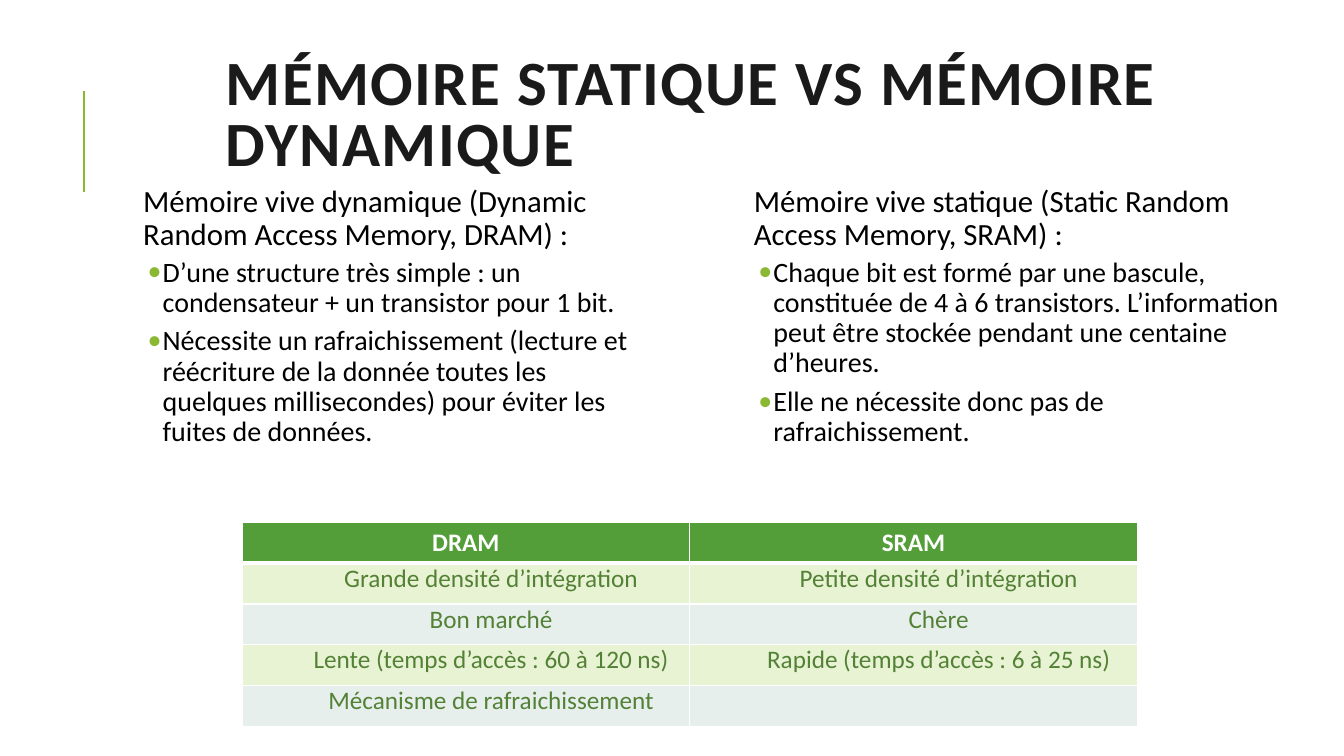
from lxml.etree import SubElement
from pptx import Presentation
from pptx.dml.color import RGBColor
from pptx.enum.shapes import MSO_CONNECTOR
from pptx.enum.text import MSO_ANCHOR, MSO_AUTO_SIZE, PP_ALIGN
from pptx.oxml import parse_xml
from pptx.oxml.ns import nsdecls, qn
from pptx.util import Cm, Pt

TITLE = "MÉMOIRE STATIQUE VS MÉMOIRE DYNAMIQUE"
COLUMNS = [
    {
        "box": (3.23, 4.55, 13.34, 9.07),
        "heading": "Mémoire vive dynamique (Dynamic Random Access Memory, DRAM) :",
        "points": [
            "D’une structure très simple : un condensateur + un transistor pour 1 bit.",
            "Nécessite un rafraichissement (lecture et réécriture de la donnée "
            "toutes les quelques millisecondes) pour éviter les fuites de données.",
        ],
    },
    {
        "box": (18.62, 4.55, 14.15, 8.61),
        "heading": "Mémoire vive statique (Static Random Access Memory, SRAM) :",
        "points": [
            "Chaque bit est formé par une bascule, constituée de 4 à 6 transistors. "
            "L’information peut être stockée pendant une centaine d’heures.",
            "Elle ne nécessite donc pas de rafraichissement.",
        ],
    },
]
COMPARISON = [
    ("DRAM", "SRAM"),
    ("Grande densité d’intégration", "Petite densité d’intégration"),
    ("Bon marché", "Chère"),
    ("Lente (temps d’accès : 60 à 120 ns)", "Rapide (temps d’accès : 6 à 25 ns)"),
    ("Mécanisme de rafraichissement", ""),
]

FONT = "Calibri"
WHITE = RGBColor(0xFF, 0xFF, 0xFF)
BLACK = RGBColor(0x00, 0x00, 0x00)
TITLE_INK = RGBColor(0x1A, 0x1A, 0x1A)
LIME = RGBColor(0x8A, 0xB8, 0x33)
HEADER_GREEN = RGBColor(0x54, 0x9E, 0x39)
CELL_INK = RGBColor(0x53, 0x81, 0x35)
BANDS = [RGBColor(0xE7, 0xEF, 0xEC), RGBColor(0xE8, 0xF3, 0xD4)]

COLUMN_WIDTH, ROW_HEIGHT = Cm(11.28), Cm(1.03)


def style(paragraph, size, color, bold=False):
    for run in paragraph.runs:
        run.font.name = FONT
        run.font.size = Pt(size)
        run.font.bold = bold
        run.font.color.rgb = color


def indent(paragraph, left, first=0):
    properties = paragraph._p.get_or_add_pPr()
    properties.set("marL", str(Cm(left)))
    properties.set("indent", str(Cm(first)))
    return properties


def add_bullet(properties):
    color = SubElement(properties, qn("a:buClr"))
    SubElement(color, qn("a:srgbClr")).set("val", str(LIME))
    SubElement(properties, qn("a:buFont")).set("typeface", FONT)
    SubElement(properties, qn("a:buChar")).set("char", "•")


def add_title(slide):
    title = slide.shapes.title
    title.left, title.top, title.width, title.height = map(Cm, (5.44, 2.24, 29.41, 3))
    frame = title.text_frame
    frame.text = TITLE
    frame.word_wrap = True
    frame.auto_size = MSO_AUTO_SIZE.NONE
    frame.vertical_anchor = MSO_ANCHOR.MIDDLE
    frame.margin_bottom = Cm(1.67)
    heading = frame.paragraphs[0]
    heading.alignment = PP_ALIGN.LEFT
    heading.line_spacing = 0.8
    style(heading, 45, TITLE_INK, True)
    heading.runs[0]._r.get_or_add_rPr().set("spc", "100")


def add_accent(slide):
    accent = slide.shapes.add_connector(
        MSO_CONNECTOR.STRAIGHT, Cm(2.11), Cm(4.83), Cm(2.11), Cm(2.29))
    accent.line.color.rgb = LIME
    accent.line.width = Pt(1.5)
    SubElement(accent._element.spPr, qn("a:effectLst"))


def add_column(slide, column):
    frame = slide.shapes.add_textbox(*map(Cm, column["box"])).text_frame
    frame.word_wrap = True
    frame.margin_left = frame.margin_right = Cm(0.13)
    frame.margin_top = frame.margin_bottom = Cm(0.13)
    frame.text = "\n".join([column["heading"], *column["points"]])
    heading, *points = frame.paragraphs
    heading.line_spacing = 0.9
    heading.space_before, heading.space_after = Pt(12), Pt(2)
    indent(heading, 0.25)
    style(heading, 22, BLACK)
    for point in points:
        point.level = 1
        point.line_spacing = 0.9
        point.space_before, point.space_after = Pt(2), Pt(4)
        add_bullet(indent(point, 0.74, -0.38))
        style(point, 20, BLACK)


def add_borders(cell, bottom):
    widths = {"lnL": 1, "lnR": 1, "lnT": 1, "lnB": bottom}
    for position, (side, width) in enumerate(widths.items()):
        border = parse_xml(
            f'<a:{side} {nsdecls("a")} w="{Pt(width)}"><a:solidFill>'
            f'<a:srgbClr val="{WHITE}"/></a:solidFill></a:{side}>')
        cell._tc.get_or_add_tcPr().insert(position, border)


def add_comparison(slide):
    rows, columns = len(COMPARISON), len(COMPARISON[0])
    table = slide.shapes.add_table(
        rows, columns, Cm(6.1), Cm(13.16),
        COLUMN_WIDTH * columns, ROW_HEIGHT * rows).table
    for r, texts in enumerate(COMPARISON):
        table.rows[r].height = ROW_HEIGHT
        header = r == 0
        for c, text in enumerate(texts):
            cell = table.cell(r, c)
            cell.text = text
            cell.fill.solid()
            cell.fill.fore_color.rgb = HEADER_GREEN if header else BANDS[r % 2]
            add_borders(cell, 3 if header or r == 1 and False else 1)
            entry = cell.text_frame.paragraphs[0]
            entry.alignment = PP_ALIGN.CENTER
            style(entry, 18, WHITE if header else CELL_INK, header)
            if not header:
                cell.margin_left = cell.margin_right = Cm(0.19)
                cell.margin_top = cell.margin_bottom = 0
                indent(entry, 1.27)


def main():
    deck = Presentation()
    deck.slide_width, deck.slide_height = Cm(33.87), Cm(19.05)
    slide = deck.slides.add_slide(deck.slide_layouts[5])
    add_accent(slide)
    add_title(slide)
    for column in COLUMNS:
        add_column(slide, column)
    add_comparison(slide)
    deck.save("out.pptx")


if __name__ == "__main__":
    main()
